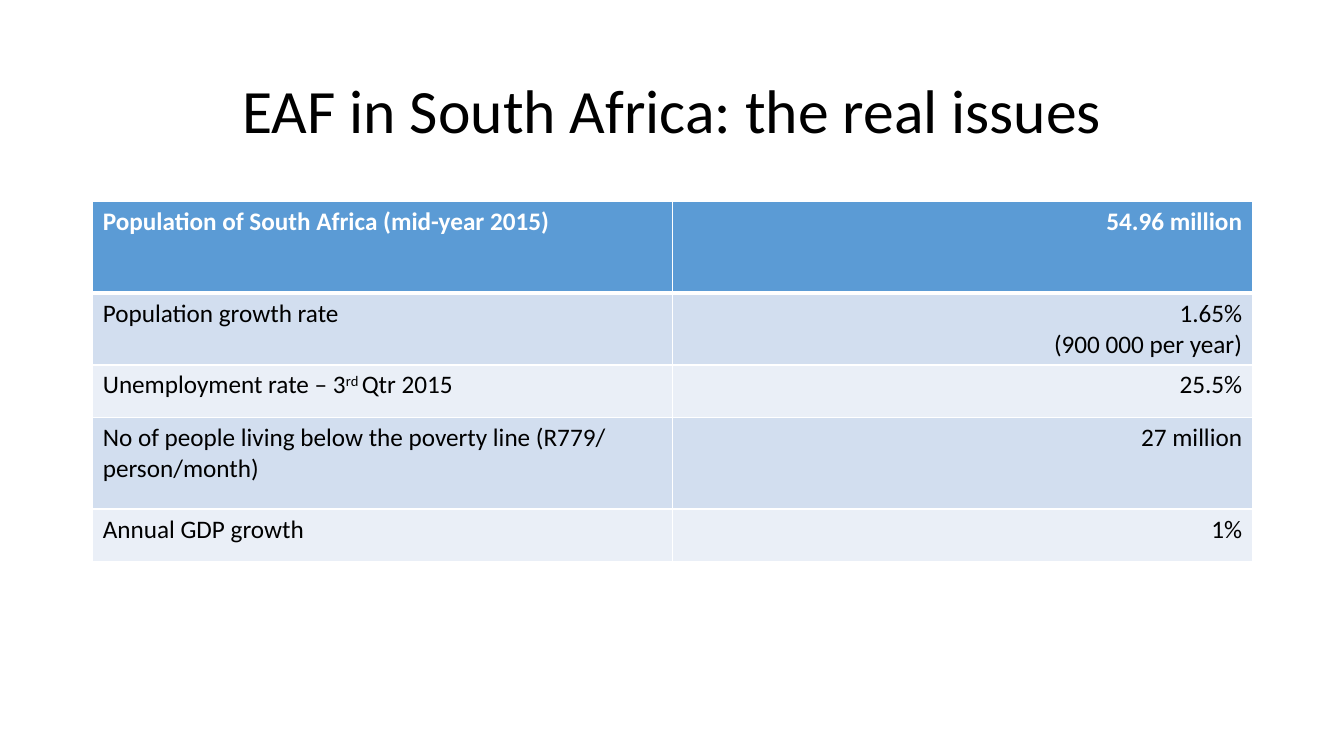
from dataclasses import dataclass

from lxml.etree import SubElement
from pptx import Presentation
from pptx.dml.color import RGBColor
from pptx.enum.text import MSO_ANCHOR, PP_ALIGN
from pptx.oxml.ns import qn
from pptx.util import Inches, Pt


@dataclass(frozen=True)
class Theme:
    font: str = "Calibri"
    title: int = 44
    body: int = 18
    dark: str = "000000"
    light: str = "FFFFFF"
    head: str = "5B9BD5"
    bands: tuple = ("EAEFF7", "D2DEEF")


THEME = Theme()
LEFT, WIDTH = 0.92, 11.5
ROWS = [
    (0.91, "Population of South Africa (mid-year 2015)", "54.96 million"),
    (0.71, "Population growth rate", "1.65%\n(900 000 per year)"),
    (0.52, "Unemployment rate – 3^rd ^Qtr 2015", "25.5%"),
    (0.91, "No of people living below the poverty line (R779/ person/month)",
     "27 million"),
    (0.52, "Annual GDP growth", "1%"),
]


def style(para, size, color, align, bold=False):
    para.alignment = align
    font = para.font
    font.name, font.size, font.bold = THEME.font, Pt(size), bold
    font.color.rgb = RGBColor.from_string(color)


def add_title(slide, text):
    title = slide.shapes.title
    title.left, title.top = Inches(LEFT), Inches(0.4)
    title.width, title.height = Inches(WIDTH), Inches(1.45)
    frame = title.text_frame
    frame.text = text
    frame.word_wrap = True
    frame.vertical_anchor = MSO_ANCHOR.MIDDLE
    para = frame.paragraphs[0]
    para.line_spacing = 0.9
    style(para, THEME.title, THEME.dark, PP_ALIGN.CENTER)


def add_runs(para, text):
    for index, part in enumerate(text.split("^")):
        run = para.add_run()
        run.text = part
        if index % 2:
            run._r.get_or_add_rPr().set("baseline", "30000")


def add_edges(cell, widths):
    props = cell._tc.get_or_add_tcPr()
    for side, width in widths.items():
        line = SubElement(props, qn(f"a:ln{side}"), w=str(Pt(width)))
        fill = SubElement(line, qn("a:solidFill"))
        SubElement(fill, qn("a:srgbClr"), val=THEME.light)


def fill_cell(cell, text, align, row):
    head = row == 0
    add_edges(cell, {"L": 1, "R": 1, "T": 3 if row == 1 else 1, "B": 3 if head else 1})
    cell.fill.solid()
    shade = THEME.head if head else THEME.bands[row % 2]
    cell.fill.fore_color.rgb = RGBColor.from_string(shade)
    frame = cell.text_frame
    for index, line in enumerate(text.split("\n")):
        para = frame.add_paragraph() if index else frame.paragraphs[0]
        add_runs(para, line)
        style(para, THEME.body, THEME.light if head else THEME.dark, align, head)


def add_grid(slide, rows):
    high = sum(row[0] for row in rows)
    table = slide.shapes.add_table(
        len(rows), 2, Inches(LEFT), Inches(2), Inches(WIDTH), Inches(high)).table
    for index, (height, label, value) in enumerate(rows):
        table.rows[index].height = Inches(height)
        fill_cell(table.cell(index, 0), label, PP_ALIGN.LEFT, index)
        fill_cell(table.cell(index, 1), value, PP_ALIGN.RIGHT, index)


def main():
    deck = Presentation()
    deck.slide_width, deck.slide_height = Inches(13.33), Inches(7.5)
    slide = deck.slides.add_slide(deck.slide_layouts[5])
    add_title(slide, "EAF in South Africa: the real issues")
    add_grid(slide, ROWS)
    deck.save("out.pptx")


if __name__ == "__main__":
    main()
